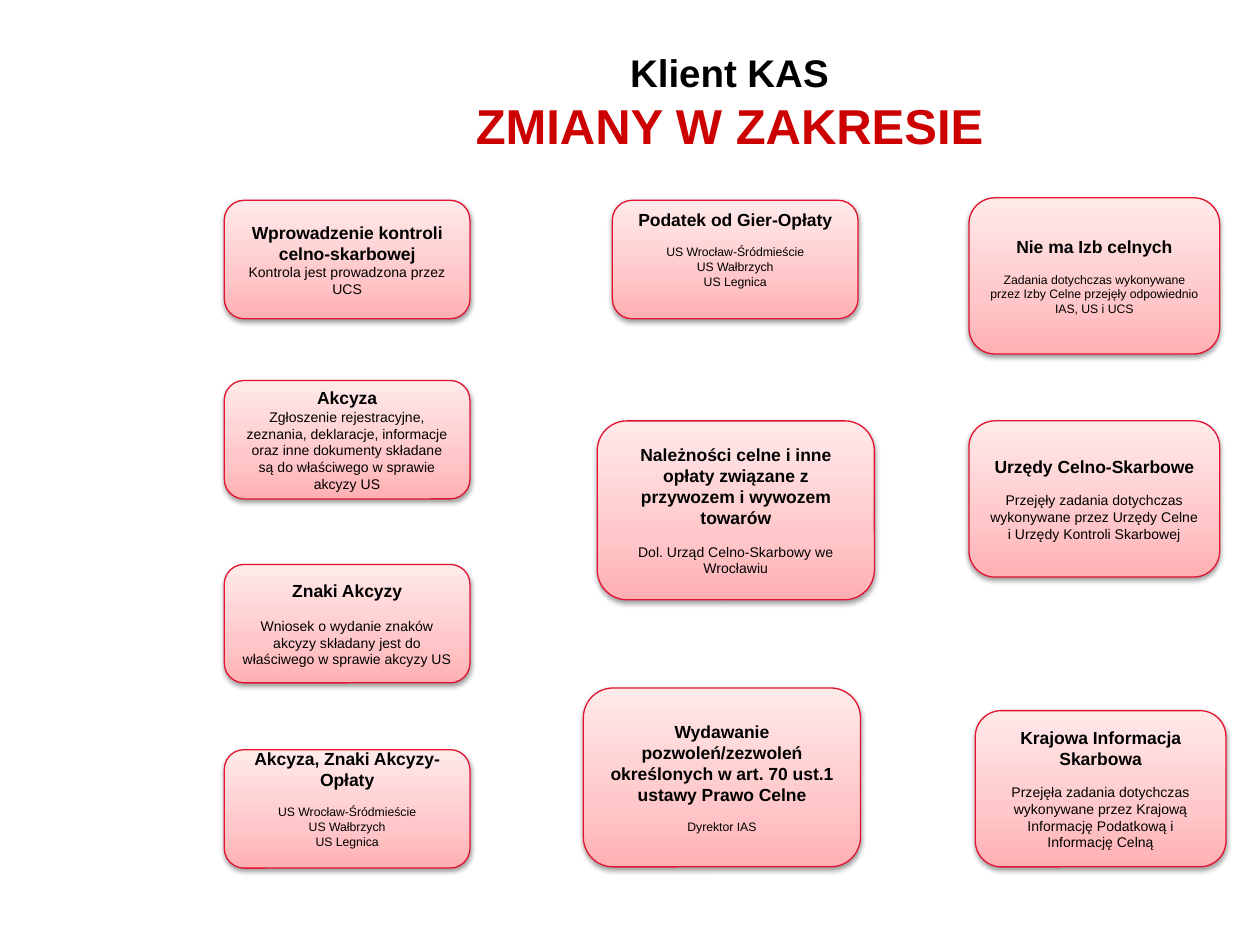
from lxml import etree
from pptx import Presentation, util as u
from pptx.dml.color import RGBColor
from pptx.enum import shapes, text
from pptx.oxml import ns

CELL = 0.1
SMALL, LARGE, SIDE = (19.5, 9.4), (22, 14.2), (19.9, 12.4)
STOPS = [(0, "FFB0B3"), (35, "FFC7C9"), (100, "FFEAEA")]
PAID = ["US Wrocław-Śródmieście", "US Wałbrzych", "US Legnica"]

LEFT = [
    (0, 0, SMALL, "Wprowadzenie kontroli celno-skarbowej",
     ["Kontrola jest prowadzona przez UCS"], 8, 0, 0),
    (0, 14.3, SMALL, "Akcyza",
     ["Zgłoszenie rejestracyjne, zeznania, deklaracje, informacje oraz inne "
      "dokumenty składane są do właściwego w sprawie akcyzy US"], 8, 0, 0),
    (0, 28.9, SMALL, "Znaki Akcyzy",
     ["Wniosek o wydanie znaków akcyzy składany jest do właściwego "
      "w sprawie akcyzy US"], 8, 9.5, 0),
    (0, 43.6, SMALL, "Akcyza, Znaki Akcyzy-Opłaty", PAID, 7, 8.5, 1.7),
]
MIDDLE = [
    (2.3, 0, SMALL, "Podatek od Gier-Opłaty", PAID, 7, 8.5, 1.7),
    (1.1, 17.5, LARGE,
     "Należności celne i inne opłaty związane z przywozem i wywozem towarów",
     ["Dol. Urząd Celno-Skarbowy we Wrocławiu"], 8, 8.5, 0),
    (0, 38.7, LARGE,
     "Wydawanie pozwoleń/zezwoleń określonych w art. 70 ust.1 ustawy Prawo Celne",
     ["Dyrektor IAS"], 7, 8.5, 0),
]
RIGHT = [
    (0, 0, SIDE, "Nie ma Izb celnych",
     ["Zadania dotychczas wykonywane przez Izby Celne przejęły odpowiednio "
      "IAS, US i UCS"], 7, 8.5, 0),
    (0, 17.7, SIDE, "Urzędy Celno-Skarbowe",
     ["Przejęły zadania dotychczas wykonywane przez Urzędy Celne",
      "i Urzędy Kontroli Skarbowej"], 8, 8.5, 0),
    (0.5, 40.7, SIDE, "Krajowa Informacja Skarbowa",
     ["Przejęła zadania dotychczas wykonywane przez Krajową Informację "
      "Podatkową i Informację Celną"], 8, 8.5, 0),
]


def cells(*nums):
    """Turn grid cells into lengths."""
    return [u.Inches(n * CELL) for n in nums]


def color(code):
    """Make a colour from a hex string."""
    return RGBColor.from_string(code)


def write(frame, words, size=8, bold=False, ink="000000", before=0):
    """Add one centred paragraph to a text frame."""
    para = frame.paragraphs[0]
    if para.runs:
        para = frame.add_paragraph()
    para.alignment = text.PP_ALIGN.CENTER
    para.space_before = u.Pt(before)
    run = para.add_run()
    run.text = words
    font = run.font
    font.name, font.size, font.bold = "Arial", u.Pt(size), bold
    font.color.rgb = color(ink)


def node(up, tag, **attrs):
    """Add a drawing element under a parent."""
    kid = etree.SubElement(up, ns.qn("a:" + tag))
    for key, val in attrs.items():
        kid.set(key, str(val))
    return kid


def style(shape):
    """Give a card its gradient, outline and shadow."""
    shape.shadow.inherit = False
    shape.line.color.rgb = color("E31332")
    shape.line.width = u.Pt(0.75)
    shape.fill.gradient()
    props = shape.fill._xPr
    grad = props.find(ns.qn("a:gradFill"))
    for kid in list(grad):
        grad.remove(kid)
    stops = node(grad, "gsLst")
    for pos, code in STOPS:
        node(node(stops, "gs", pos=pos * 1000), "srgbClr", val=code)
    node(grad, "lin", ang=270 * 60000, scaled=0)
    shade = node(props.find(ns.qn("a:effectLst")), "outerShdw",
                 blurRad=u.Pt(3.1), dist=u.Pt(1.6), dir=90 * 60000, rotWithShape=0)
    node(node(shade, "srgbClr", val="000000"), "alpha", val=38000)


def card(slide, box, head, lines, size, gap, lift):
    """Draw one rounded card with a heading and its lines."""
    shape = slide.shapes.add_shape(shapes.MSO_SHAPE.ROUNDED_RECTANGLE, *cells(*box))
    style(shape)
    frame = shape.text_frame
    frame.word_wrap = True
    frame.vertical_anchor = text.MSO_ANCHOR.MIDDLE
    frame.margin_bottom = cells(0.5 + lift)[0]
    write(frame, head, size=10, bold=True)
    for num, line in enumerate(lines):
        write(frame, line, size=size, before=0 if num else gap)


def column(slide, left, top, cards):
    """Place a column of cards from its top left corner."""
    for dx, dy, size, *rest in cards:
        card(slide, (left + dx, top + dy, *size), *rest)


def title(slide, box):
    """Write the two title lines."""
    frame = slide.shapes.add_textbox(*cells(*box)).text_frame
    frame.word_wrap = True
    write(frame, "Klient KAS", size=22, bold=True)
    write(frame, "ZMIANY W ZAKRESIE", size=28, bold=True, ink="CC0000")


def main():
    """Build and save the slide."""
    deck = Presentation()
    deck.slide_width, deck.slide_height = cells(100, 75)
    slide = deck.slides.add_slide(deck.slide_layouts[6])
    column(slide, 17.8, 15.9, LEFT)
    column(slide, 46.3, 15.9, MIDDLE)
    column(slide, 76.9, 15.7, RIGHT)
    title(slide, (32.1, 3.4, 51.6, 9.4))
    deck.save("out.pptx")


if __name__ == "__main__":
    main()
